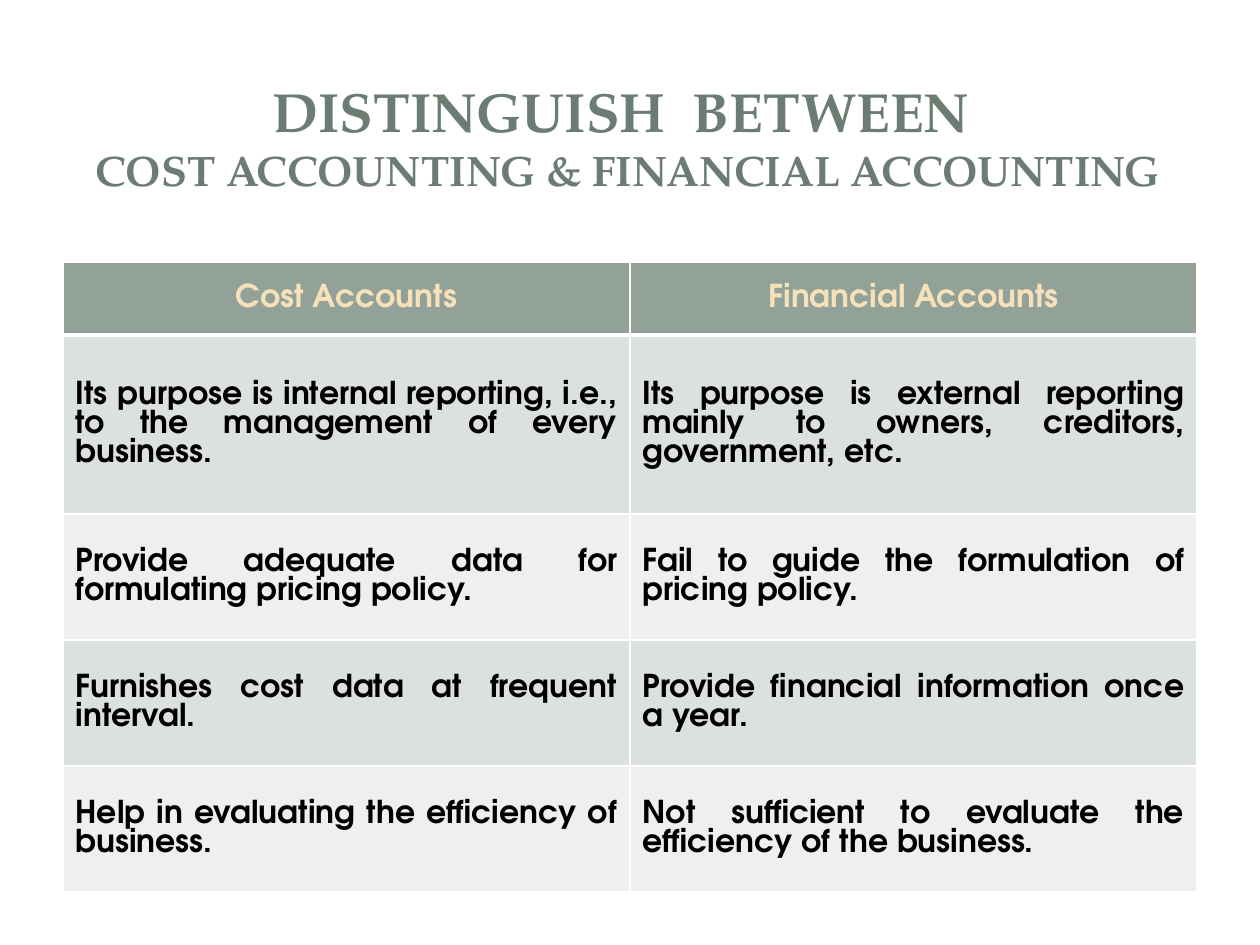
from lxml import etree
from pptx import Presentation
from pptx.dml.color import RGBColor
from pptx.enum.shapes import MSO_SHAPE
from pptx.enum.text import MSO_ANCHOR, PP_ALIGN
from pptx.oxml.ns import qn
from pptx.util import Inches, Pt

CENTER, JUSTIFY = PP_ALIGN.CENTER, PP_ALIGN.JUSTIFY
MIDDLE = MSO_ANCHOR.MIDDLE
RECTANGLE, ROUNDED = MSO_SHAPE.RECTANGLE, MSO_SHAPE.ROUNDED_RECTANGLE
TITLE_FONT, TABLE_FONT = "TeX Gyre Pagella", "TeX Gyre Adventor"
WHITE = "FFFFFF"


def add_text(paragraph, text, font, size, color, align):
    paragraph.alignment = align
    run = paragraph.add_run()
    run.text = text
    run.font.name = font
    run.font.size = Pt(size)
    run.font.bold = True
    run.font.color.rgb = RGBColor.from_string(color)


def set_borders(cell, color, **widths):
    properties = cell._tc.get_or_add_tcPr()
    for index, (side, width) in enumerate(widths.items()):
        line = etree.Element(qn(f"a:{side}"), w=str(Pt(width)))
        fill = etree.SubElement(line, qn("a:solidFill"))
        etree.SubElement(fill, qn("a:srgbClr"), val=color)
        properties.insert(index, line)


presentation = Presentation()
presentation.slide_width = Inches(10)
presentation.slide_height = Inches(7.5)
slide = presentation.slides.add_slide(presentation.slide_layouts[5])

# White page panel and title frame: kind, box, opacity in percent
panels = [
    (ROUNDED, (0.1, 0.11, 9.8, 7.29), 100),
    (RECTANGLE, (0.3, 0.3, 9.4, 1.45), 83),
    (RECTANGLE, (0.41, 0.41, 9.17, 1.22), 100),
]
for kind, box, opacity in panels:
    panel = slide.shapes.add_shape(kind, *map(Inches, box))
    panel.shadow.inherit = False
    panel.line.fill.background()
    panel.fill.solid()
    panel.fill.fore_color.rgb = RGBColor.from_string(WHITE)
    if kind == ROUNDED:
        panel.adjustments[0] = 0.017
    if opacity < 100:
        color_element = panel._element.spPr.find(qn("a:solidFill"))[0]
        etree.SubElement(color_element, qn("a:alpha"), val=str(opacity * 1000))

# Title in two sizes, brought in front of the panels
title = slide.shapes.title
slide.shapes._spTree.append(title._element)
title.left, title.top = Inches(0.47), Inches(0.33)
title.width, title.height = Inches(9.03), Inches(1.5)
title.text_frame.word_wrap = True
title.text_frame.vertical_anchor = MIDDLE
heading = title.text_frame.paragraphs[0]
title_format = dict(font=TITLE_FONT, color="6B7D72", align=CENTER)
add_text(heading, "DISTINGUISH  BETWEEN ", size=31.5, **title_format)
heading.add_line_break()
add_text(heading, "COST ACCOUNTING & FINANCIAL ACCOUNTING", size=24.3, **title_format)

# Comparison table
rows = [
    ("Cost Accounts", "Financial Accounts"),
    ("Its purpose is internal reporting, i.e., to the management of every business.",
     "Its purpose is external reporting mainly to owners, creditors, government, etc."),
    ("Provide adequate data for formulating pricing policy.",
     "Fail to guide the formulation of pricing policy."),
    ("Furnishes cost data at frequent interval.",
     "Provide financial information once a year."),
    ("Help in evaluating the efficiency of business.",
     "Not sufficient to evaluate the efficiency of the business."),
]
row_heights = [0.58, 1.42, 1, 1, 1]
table = slide.shapes.add_table(
    len(rows), 2, Inches(0.5), Inches(2.08), Inches(9), Inches(sum(row_heights))).table

for row_index, (texts, height) in enumerate(zip(rows, row_heights)):
    table.rows[row_index].height = Inches(height)
    header = row_index == 0
    if header:
        fill, color, align = "93A299", "F6E1B8", CENTER
    else:
        fill = "DCE0DE" if row_index % 2 else "EEF0EF"
        color, align = "000000", JUSTIFY
    for column_index, text in enumerate(texts):
        cell = table.cell(row_index, column_index)
        cell.vertical_anchor = MIDDLE
        cell.fill.solid()
        cell.fill.fore_color.rgb = RGBColor.from_string(fill)
        set_borders(cell, WHITE, lnL=1, lnR=1,
                    lnT=3 if row_index == 1 else 1, lnB=3 if header else 1)
        add_text(cell.text_frame.paragraphs[0], text,
                 font=TABLE_FONT, size=18, color=color, align=align)

presentation.save("out.pptx")
